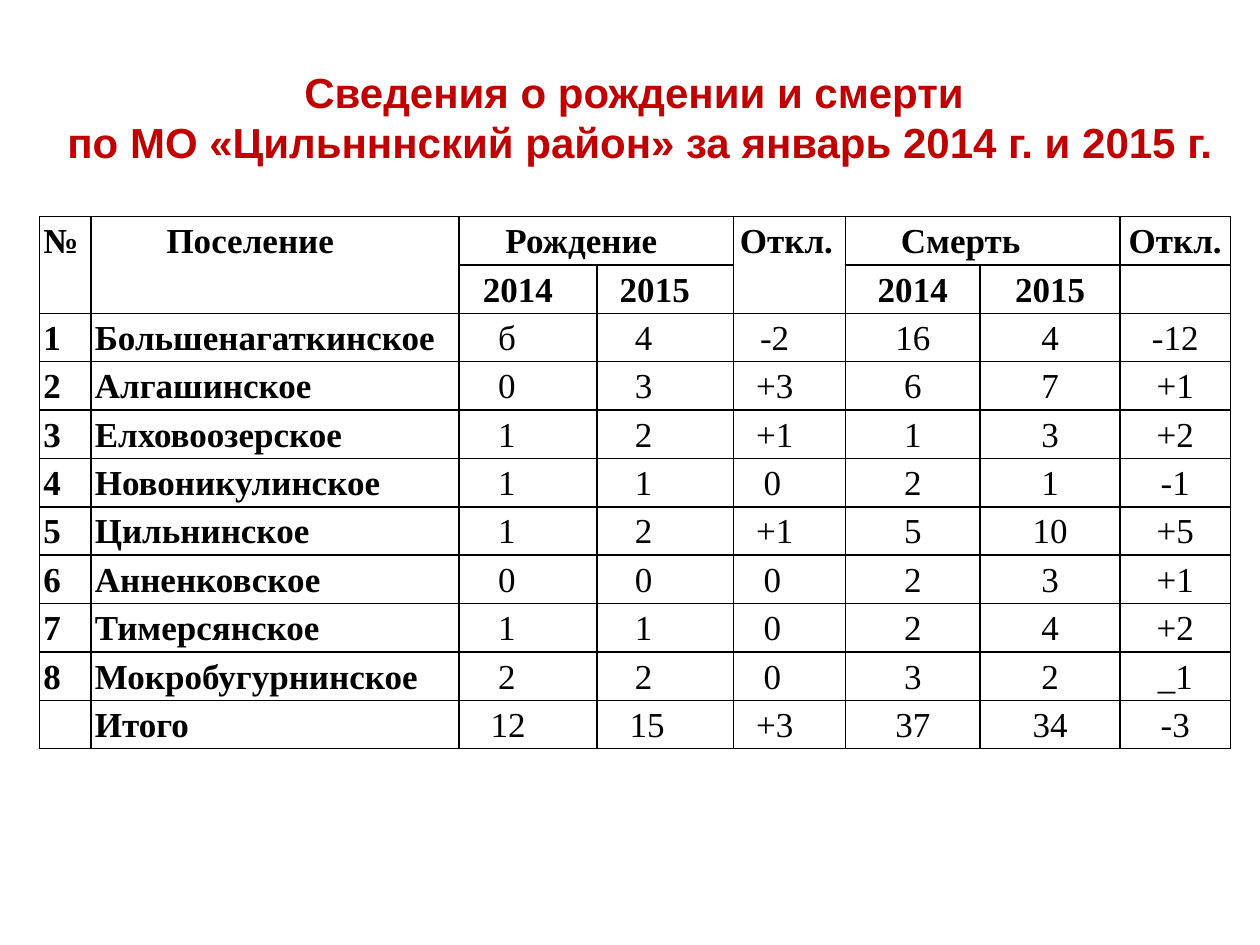
import pptx
import pptx.dml.color
import pptx.enum.text
import pptx.oxml
import pptx.oxml.ns
import pptx.util

Pt = pptx.util.Pt
RED = pptx.dml.color.RGBColor(0xC0, 0x00, 0x00)
BLACK = pptx.dml.color.RGBColor(0, 0, 0)
WHITE = pptx.dml.color.RGBColor(0xFF, 0xFF, 0xFF)
CENTER = pptx.enum.text.PP_ALIGN.CENTER

TITLE = ["Сведения о рождении и смерти ",
         "по МО «Цильнннский район» за январь 2014 г. и 2015 г."]
WIDTHS = [29.4, 210.2, 79, 78, 64, 77, 80, 63]
ROW = 27.6
HEADS = [
    ["№", "Поселение", "Рождение", "", "Откл.", "Смерть", "", "Откл."],
    ["", "", "2014", "2015", "", "2014", "2015", ""],
]
ROWS = [
    ["1", "Большенагаткинское", "б", "4", "-2", "16", "4", "-12"],
    ["2", "Алгашинское", "0", "3", "+3", "6", "7", "+1"],
    ["3", "Елховоозерское", "1", "2", "+1", "1", "3", "+2"],
    ["4", "Новоникулинское", "1", "1", "0", "2", "1", "-1"],
    ["5", "Цильнинское", "1", "2", "+1", "5", "10", "+5"],
    ["6", "Анненковское", "0", "0", "0", "2", "3", "+1"],
    ["7", "Тимерсянское", "1", "1", "0", "2", "4", "+2"],
    ["8", "Мокробугурнинское", "2", "2", "0", "3", "2", "_1"],
    ["", "Итого", "12", "15", "+3", "37", "34", "-3"],
]
SPANS = [(0, 0, 1, 0), (0, 1, 1, 1), (0, 2, 0, 3), (0, 4, 1, 4), (0, 5, 0, 6)]
HEAD_DENTS = {"Поселение": 41, "Рождение": 24.5, "Откл.": 1.5, "Смерть": 29.5}
YEAR_DENTS = {2: 11.5, 3: 10.8}
SIGN_DENTS = {"-": 13, "+": 10.8, "0": 15}
# Birth columns: indent by number of digits
BIRTH_DENTS = {2: {1: 20.3, 2: 16}, 3: {1: 19.4, 2: 16.5}}


def dent(row, col, text):
    """Left indent of a cell in points; None means centred."""
    if text in HEAD_DENTS and col < 7:
        return HEAD_DENTS[text]
    if col > 4:
        return None
    if col < 2 or not text:
        return 0
    if row == 1:
        return YEAR_DENTS[col]
    if col == 4:
        return SIGN_DENTS[text[0]]
    return BIRTH_DENTS[col][len(text)]


class Deck:
    """Holds the text style and the current slide."""

    def __init__(self):
        self.show = pptx.Presentation()
        self.show.slide_width, self.show.slide_height = Pt(720), Pt(540)
        self.slide = self.show.slides.add_slide(self.show.slide_layouts[6])

    def run(self, para, text, face, size, color, bold):
        run = para.add_run()
        run.text = text
        font = run.font
        font.name, font.size, font.bold = face, Pt(size), bold
        font.color.rgb = color

    def title(self, lines, left, top, width, height):
        box = self.slide.shapes.add_textbox(Pt(left), Pt(top), Pt(width), Pt(height))
        frame = box.text_frame
        frame.word_wrap = True
        frame.auto_size = pptx.enum.text.MSO_AUTO_SIZE.SHAPE_TO_FIT_TEXT
        frame.vertical_anchor = pptx.enum.text.MSO_ANCHOR.MIDDLE
        for i, line in enumerate(lines):
            para = frame.add_paragraph() if i else frame.paragraphs[0]
            para.alignment = CENTER
            self.run(para, line, "Arial", 24, RED, True)

    def edge(self, cell):
        """Draw a black line on all four sides of a cell."""
        props = cell._tc.get_or_add_tcPr()
        for side in "LRTB":
            props.append(pptx.oxml.parse_xml(
                f'<a:ln{side} {pptx.oxml.ns.nsdecls("a")} w="{Pt(1)}">'
                f'<a:solidFill><a:srgbClr val="{BLACK}"/></a:solidFill></a:ln{side}>'))

    def cell(self, cell, text, bold, inset):
        self.edge(cell)
        cell.fill.solid()
        cell.fill.fore_color.rgb = WHITE
        cell.margin_left = cell.margin_right = Pt(2.2)
        cell.margin_top = cell.margin_bottom = 0
        para = cell.text_frame.paragraphs[0]
        para.line_spacing = 1.15
        if inset is None:
            para.alignment = CENTER
        elif inset:
            para._p.get_or_add_pPr().set("marL", str(Pt(inset)))
        if text:
            self.run(para, text, "Times New Roman", 20, BLACK, bold)
        else:
            para.font.size = Pt(20)

    def table(self, rows, left, top):
        grid = self.slide.shapes.add_table(
            len(rows), len(WIDTHS), Pt(left), Pt(top),
            Pt(sum(WIDTHS)), Pt(ROW * len(rows))).table
        grid.first_row = grid.horz_banding = False
        for col, width in zip(grid.columns, WIDTHS):
            col.width = Pt(width)
        for r, row in enumerate(rows):
            grid.rows[r].height = Pt(ROW)
            for c, text in enumerate(row):
                bold = r < len(HEADS) or c < 2
                self.cell(grid.cell(r, c), text, bold, dent(r, c, text))
        for r, c, last_r, last_c in SPANS:
            grid.cell(r, c).merge(grid.cell(last_r, last_c))


def main():
    deck = Deck()
    deck.title(TITLE, 28, 34, 675.5, 65.5)
    deck.table(HEADS + ROWS, 22.6, 123.8)
    deck.show.save("out.pptx")


if __name__ == "__main__":
    main()
